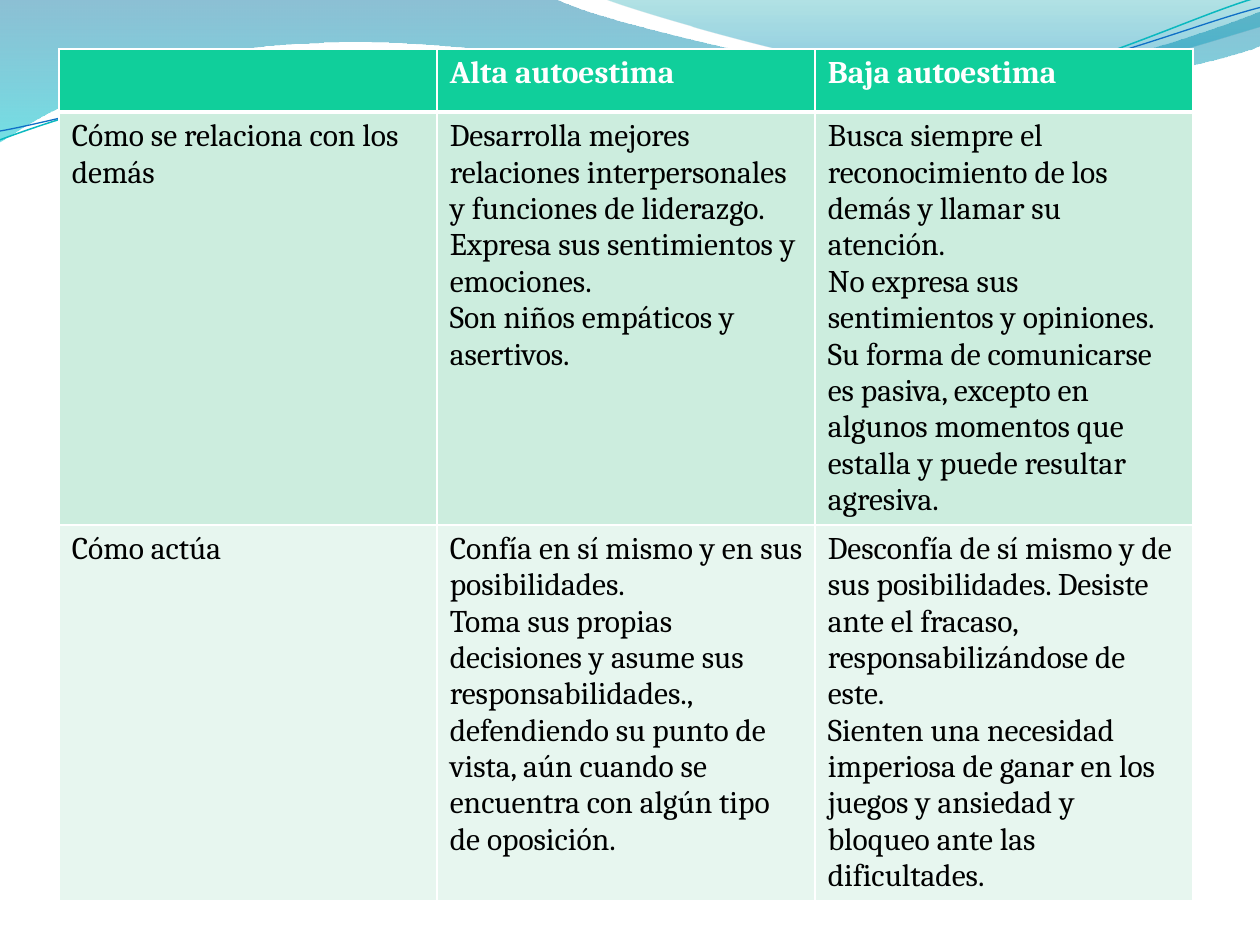
import math

import pptx
import pptx.dml.color
import pptx.oxml
import pptx.oxml.ns
import pptx.util

COLORS = {
    "deep_blue": "0074A1", "cyan": "00C6CF", "teal": "00A1A9", "sky": "008BBF",
    "line_teal": "0AB8BF", "line_blue": "0F6FC6",
    "header": "10CF9B", "band": "CCEDDE", "light_band": "E7F6EF",
    "white": "FFFFFF", "black": "000000",
}
FONT = "Cambria"
TEXT_SIZE = 18
COLUMNS, ROWS = 10, 7.5  # square grid modules across and down the slide

# An outline is a list of steps: one point is a start or a line, three are a curve.
LEFT_WAVE = [
    [(0, 0)], [(4.4, -0.01)], [(4.76, 0.17), (6.64, 0.63), (7.58, 0.63)],
    [(8.53, 0.63), (9.58, 0.26), (10, 0.09)], [(10.01, 0.36)],
    [(9.83, 0.44), (8.7, 0.76), (7.46, 0.75)],
    [(6.22, 0.75), (3.82, 0.28), (2.57, 0.34)],
    [(1.29, 0.36), (0.46, 0.83), (-0.01, 1.13)], [(0, 0)],
]
RIGHT_WAVE = [
    [(4.79, -0.01)], [(5.09, 0.11), (6.82, 0.62), (7.69, 0.65)],
    [(8.56, 0.69), (9.61, 0.32), (10, 0.21)], [(10, 0)], [(4.79, -0.01)],
]
TEAL_LINE = [
    [(0, 1.11)], [(0.48, 0.93), (1.58, 0.57), (2.77, 0.52)],
    [(3.95, 0.47), (5.93, 0.89), (7.13, 0.8)],
    [(8.33, 0.71), (9.38, 0.15), (9.98, -0.02)],
]
BLUE_LINE = [
    [(0, 1.04)], [(0.47, 0.96), (1.64, 0.61), (2.83, 0.56)],
    [(4.03, 0.51), (5.97, 0.84), (7.17, 0.75)],
    [(8.36, 0.67), (9.41, 0.21), (10, 0.06)],
]
LINE_TILT = -2.7

COMPARISON = [
    [[], ["Alta autoestima"], ["Baja autoestima"]],
    [
        ["Cómo se relaciona con los demás"],
        ["Desarrolla mejores relaciones interpersonales y funciones de liderazgo.",
         "Expresa sus sentimientos y emociones.",
         "Son niños empáticos y asertivos."],
        ["Busca siempre el reconocimiento de los demás y llamar su atención.",
         "No expresa sus sentimientos y opiniones. Su forma de comunicarse es "
         "pasiva, excepto en algunos momentos que estalla y puede resultar agresiva."],
    ],
    [
        ["Cómo actúa"],
        ["Confía en sí mismo y en sus posibilidades.",
         "Toma sus propias decisiones y asume sus responsabilidades., defendiendo "
         "su punto de vista, aún cuando se encuentra con algún tipo de oposición."],
        ["Desconfía de sí mismo y de sus posibilidades. Desiste ante el fracaso, "
         "responsabilizándose de este.",
         "Sienten una necesidad imperiosa de ganar en los juegos y ansiedad y "
         "bloqueo ante las dificultades."],
    ],
]


def rgb(name):
    return pptx.dml.color.RGBColor.from_string(COLORS[name])


def xml(tag, content="", attributes=""):
    ns = pptx.oxml.ns.nsdecls("a")
    return pptx.oxml.parse_xml(f"<a:{tag} {ns} {attributes}>{content}</a:{tag}>")


def color_xml(name, opacity=100):
    return (f'<a:srgbClr val="{COLORS[name]}">'
            f'<a:alpha val="{opacity * 1000}"/></a:srgbClr>')


def turn(outline, degrees, center):
    cos, sin = math.cos(math.radians(degrees)), math.sin(math.radians(degrees))
    cx, cy = center
    return [[(cx + (x - cx) * cos - (y - cy) * sin,
              cy + (x - cx) * sin + (y - cy) * cos) for x, y in step]
            for step in outline]


class SlideBuilder:
    def __init__(self, presentation):
        self.module = presentation.slide_width / COLUMNS
        self.slide = presentation.slides.add_slide(presentation.slide_layouts[6])

    def grid(self, modules):
        return pptx.util.Emu(round(modules * self.module))

    def freeform(self, outline, closed):
        """Lay every point as a line, then join each three of a curve."""
        points = [(self.grid(x), self.grid(y)) for step in outline for x, y in step]
        builder = self.slide.shapes.build_freeform(*points[0])
        builder.add_line_segments(points[1:], close=closed)
        shape = builder.convert_to_shape()
        shape.shadow.inherit = False
        segments = iter(list(shape.element.iter(pptx.oxml.ns.qn("a:lnTo"))))
        for step in outline[1:]:
            parts = [next(segments) for _ in step]
            if len(parts) == 3:
                curve = xml("cubicBezTo")
                parts[0].addprevious(curve)
                for part in parts:
                    curve.append(part[0])
                    part.getparent().remove(part)
        return shape

    def wave(self, outline, stops):
        """Add a shape with a top-down gradient of (position, colour, opacity)."""
        shape = self.freeform(outline, True)
        shape.line.fill.background()
        shape.fill.background()
        gradient = "".join(f'<a:gs pos="{position * 1000}">{color_xml(color, opacity)}</a:gs>'
                           for position, color, opacity in stops)
        properties = shape.element.spPr
        no_fill = properties.find(pptx.oxml.ns.qn("a:noFill"))
        properties.replace(no_fill, xml(
            "gradFill", f'<a:gsLst>{gradient}</a:gsLst><a:lin ang="5400000" scaled="0"/>'))

    def tilted_line(self, outline, center, color, width):
        shape = self.freeform(turn(outline, -LINE_TILT, center), False)
        shape.rotation = LINE_TILT
        shape.fill.background()
        shape.line.color.rgb = rgb(color)
        shape.line.width = pptx.util.Pt(width)

    def cell(self, cell, paragraphs, fill, text_color, bold, bottom_width):
        cell.fill.solid()
        cell.fill.fore_color.rgb = rgb(fill)
        sides = {"lnL": 1, "lnR": 1, "lnT": 1, "lnB": bottom_width}
        for place, (side, width) in enumerate(sides.items()):
            cell._tc.get_or_add_tcPr().insert(place, xml(
                side, f'<a:solidFill>{color_xml("white")}</a:solidFill>',
                f'w="{pptx.util.Pt(width)}"'))
        frame = cell.text_frame
        for number, text in enumerate(paragraphs):
            paragraph = frame.add_paragraph() if number else frame.paragraphs[0]
            run = paragraph.add_run()
            run.text = text
            run.font.name = FONT
            run.font.size = pptx.util.Pt(TEXT_SIZE)
            run.font.bold = bold
            run.font.color.rgb = rgb(text_color)

    def table(self, content, left, top, column_width, row_heights):
        columns = len(content[0])
        sizes = (left, top, column_width * columns, sum(row_heights))
        table = self.slide.shapes.add_table(
            len(content), columns, *map(self.grid, sizes)).table
        for column in table.columns:
            column.width = self.grid(column_width)
        styles = [("header", "white", True, 3), ("band", "black", False, 1),
                  ("light_band", "black", False, 1)]
        for row, height, texts, style in zip(table.rows, row_heights, content, styles):
            row.height = self.grid(height)
            for cell, paragraphs in zip(row.cells, texts):
                self.cell(cell, paragraphs, *style)


def main():
    presentation = pptx.Presentation()
    presentation.slide_width = pptx.util.Inches(COLUMNS)
    presentation.slide_height = pptx.util.Inches(ROWS)
    builder = SlideBuilder(presentation)
    builder.wave(LEFT_WAVE, [(0, "deep_blue", 45), (100, "cyan", 55)])
    builder.wave(RIGHT_WAVE, [(0, "teal", 30), (80, "sky", 45)])
    builder.tilted_line(TEAL_LINE, (4.99, 0.58), "line_teal", 0.85)
    builder.tilted_line(BLUE_LINE, (5, 0.59), "line_blue", 0.75)
    builder.table(COMPARISON, 0.47, 0.39, 3, [0.5, 3.27, 2.98])
    presentation.save("out.pptx")


if __name__ == "__main__":
    main()
